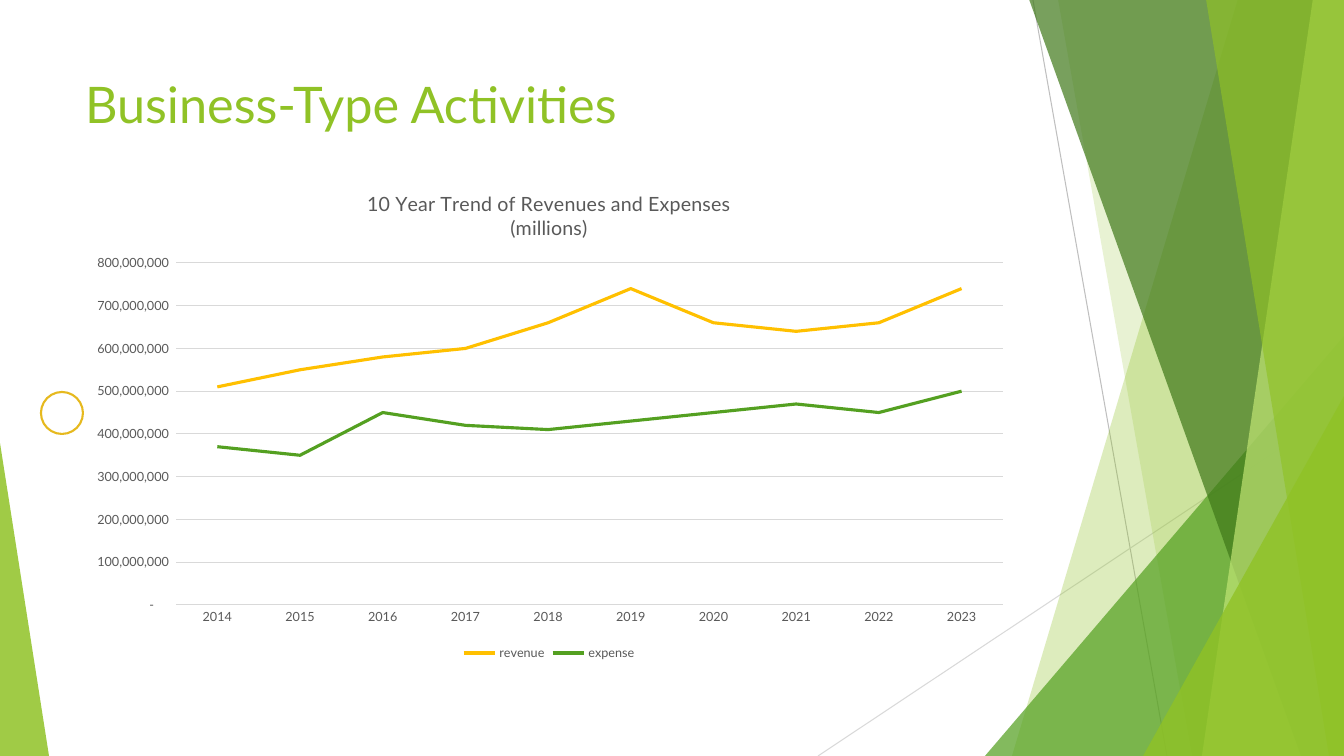
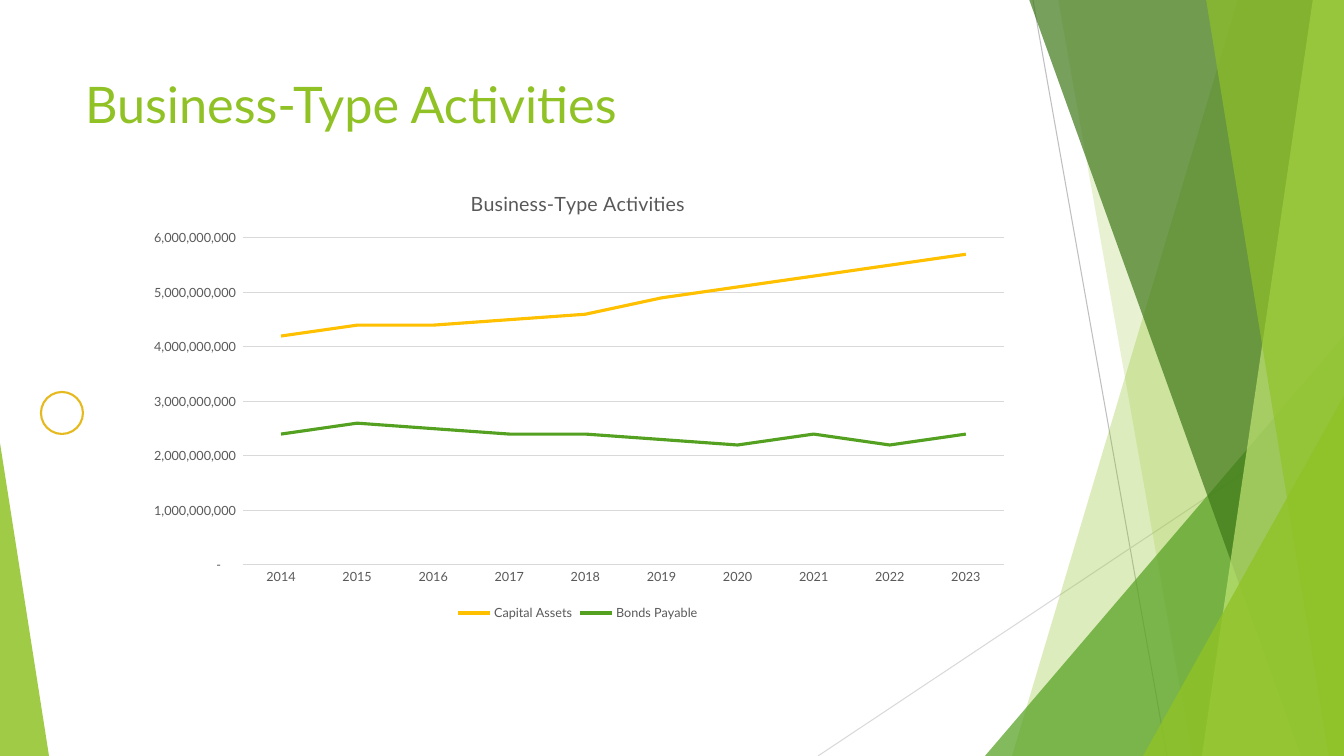
import lxml.etree
import pptx
import pptx.chart.data
import pptx.dml.color
import pptx.enum.chart
import pptx.enum.shapes
import pptx.enum.text
import pptx.oxml.ns
import pptx.util

WIDTH, HEIGHT = 1344, 756
EMU_PER_PX = 12192000 / WIDTH
YEARS = [str(year) for year in range(2014, 2024)]
MILLION = 10 ** 6


def px(length):
    return pptx.util.Emu(round(length * EMU_PER_PX))


def colour(value):
    return pptx.dml.color.RGBColor.from_string(value)


def add_child(parent, tag, **attributes):
    return lxml.etree.SubElement(parent, pptx.oxml.ns.qn(tag), attributes)


class Report:
    FONT = "Lato"
    LIME = "90C226"
    GREEN = "54A021"
    DARK_GREEN = "3F7819"
    PALE_LIME = "C0E474"
    GOLD = "E6B91E"
    AMBER = "FFC000"
    GREY = "595959"
    RULE = "D9D9D9"
    DARK_RULE = "BFBFBF"
    NUMBER_FORMAT = '_(* #,##0_);_(* \\(#,##0\\);_(* "-"??_);_('

    def __init__(self):
        self.deck = pptx.Presentation()
        self.deck.slide_width, self.deck.slide_height = px(WIDTH), px(HEIGHT)
        self.layout = self.deck.slide_layouts[5]
        self.page = None

    def add_page(self, title):
        self.page = self.deck.slides.add_slide(self.layout)
        if len(self.deck.slides) == 1:
            self.decorate_layout()
        box = self.page.shapes.title
        box.left, box.top, box.width, box.height = map(px, (75, 68, 948, 105))
        frame = box.text_frame
        frame.text = title
        frame.word_wrap = True
        frame.auto_size = pptx.enum.text.MSO_AUTO_SIZE.NONE
        frame.vertical_anchor = pptx.enum.text.MSO_ANCHOR.TOP
        para = frame.paragraphs[0]
        para.alignment = pptx.enum.text.PP_ALIGN.LEFT
        self.style_font(para.font, 36, self.LIME)

    def decorate_layout(self):
        decorations = [
            self.add_line((1033, 0), (1167, HEIGHT), self.DARK_RULE),
            self.add_line((WIDTH, 406), (818, HEIGHT), self.RULE),
            self.add_facet(1238, 1012, self.LIME, 30),
            self.add_facet(1058, 1192, self.LIME, 20),
            self.add_triangle(985, 336, 359, 1, self.GREEN, 72),
            self.add_facet(1029, 1301, self.DARK_GREEN, 70),
            self.add_facet(1313, 1202, self.PALE_LIME, 70),
            self.add_facet(1206, 1329, self.LIME, 65),
            self.add_triangle(1143, 396, 201, 1, self.LIME, 80),
            self.add_triangle(0, 443, 49, 0, self.LIME, 85),
            self.add_ring(41, 392, 42),
        ]
        for index, shape in enumerate(decorations):
            shape.element.xpath(".//p:cNvPr")[0].set("id", str(100 + index))
            self.layout.shapes.element.insert(2 + index, shape.element)

    def style_font(self, font, size, tone):
        font.name = self.FONT
        font.size = pptx.util.Pt(size)
        font.bold = False
        font.color.rgb = colour(tone)

    def style_line(self, line, tone, width=0.75):
        line.color.rgb = colour(tone)
        line.width = pptx.util.Pt(width)

    def fill_shape(self, shape, tone, opacity):
        shape.shadow.inherit = False
        shape.line.fill.background()
        shape.fill.solid()
        shape.fill.fore_color.rgb = colour(tone)
        fill = shape.element.xpath("./p:spPr/a:solidFill/a:srgbClr")[0]
        add_child(fill, "a:alpha", val=str(opacity * 1000))
        return shape

    def add_line(self, start, end, tone):
        line = self.page.shapes.add_connector(
            pptx.enum.shapes.MSO_CONNECTOR.STRAIGHT, *map(px, start + end))
        self.style_line(line.line, tone)
        add_child(line.element.spPr, "a:effectLst")
        return line

    def add_facet(self, top_x, bottom_x, tone, opacity):
        builder = self.page.shapes.build_freeform(px(top_x), px(-1), scale=1.0)
        corners = [(WIDTH, -1), (WIDTH, HEIGHT), (bottom_x, HEIGHT)]
        builder.add_line_segments([(px(x), px(y)) for x, y in corners], close=True)
        return self.fill_shape(builder.convert_to_shape(), tone, opacity)

    def add_triangle(self, left, top, width, apex, tone, opacity):
        triangle = self.page.shapes.add_shape(
            pptx.enum.shapes.MSO_SHAPE.ISOSCELES_TRIANGLE,
            *map(px, (left, top, width, HEIGHT - top)))
        triangle.adjustments[0] = apex
        return self.fill_shape(triangle, tone, opacity)

    def add_ring(self, left, top, size):
        ring = self.page.shapes.add_shape(
            pptx.enum.shapes.MSO_SHAPE.OVAL, *map(px, (left, top, size, size)))
        ring.shadow.inherit = False
        ring.fill.background()
        self.style_line(ring.line, self.GOLD, 1.5)
        return ring

    def add_trend(self, area, plot, title, maximum, step, series):
        data = pptx.chart.data.CategoryChartData(number_format=self.NUMBER_FORMAT)
        data.categories = YEARS
        for name, values in series.items():
            data.add_series(name, [value * MILLION for value in values])
        chart = self.page.shapes.add_chart(
            pptx.enum.chart.XL_CHART_TYPE.LINE, *map(px, area), data).chart
        self.style_font(chart.font, 9, self.GREY)

        chart.has_title = True
        frame = chart.chart_title.text_frame
        frame.text = title
        for para in frame.paragraphs:
            self.style_font(para.font, 14, self.GREY)
        chart.chart_title.include_in_layout = False

        chart.has_legend = True
        chart.legend.position = pptx.enum.chart.XL_LEGEND_POSITION.BOTTOM
        chart.legend.include_in_layout = False
        self.style_font(chart.legend.font, 9, self.GREY)

        for axis in (chart.category_axis, chart.value_axis):
            axis.major_tick_mark = pptx.enum.chart.XL_TICK_MARK.NONE
            axis.minor_tick_mark = pptx.enum.chart.XL_TICK_MARK.NONE
            self.style_font(axis.tick_labels.font, 9, self.GREY)
        self.style_line(chart.category_axis.format.line, self.RULE)
        scale = chart.value_axis
        scale.minimum_scale = 0
        scale.maximum_scale = maximum * MILLION
        scale.major_unit = step * MILLION
        scale.format.line.fill.background()
        scale.has_major_gridlines = True
        self.style_line(scale.major_gridlines.format.line, self.RULE)
        scale.tick_labels.number_format = self.NUMBER_FORMAT
        scale.tick_labels.number_format_is_linked = False

        chart.plots[0].vary_by_categories = False
        for line, tone in zip(chart.plots[0].series, (self.AMBER, self.GREEN)):
            line.smooth = False
            self.style_line(line.format.line, tone, 2.25)
        self.place_plot(chart, area, plot)

    def place_plot(self, chart, area, plot):
        plot_area = chart.element.xpath(".//c:plotArea")[0]
        for old in plot_area.xpath("./c:layout"):
            plot_area.remove(old)
        layout = add_child(plot_area, "c:layout")
        plot_area.insert(0, layout)
        manual = add_child(layout, "c:manualLayout")
        left, top, width, height = area
        settings = {
            "layoutTarget": "inner", "xMode": "edge", "yMode": "edge",
            "x": (plot[0] - left) / width, "y": (plot[1] - top) / height,
            "w": plot[2] / width, "h": plot[3] / height,
        }
        for tag, value in settings.items():
            add_child(manual, "c:" + tag, val=str(value))


def main():
    report = Report()
    report.add_page("Business-Type Activities")
    report.add_trend(
        (75, 171, 948, 494), (176, 263, 827, 342),
        "10 Year Trend of Revenues and Expenses\n(millions)", 800, 100,
        {"revenue": [510, 550, 580, 600, 660, 740, 660, 640, 660, 740],
         "expense": [370, 350, 450, 420, 410, 430, 450, 470, 450, 500]})
    report.add_page("Business-Type Activities")
    report.add_trend(
        (133, 171, 890, 454), (243, 238, 761, 327),
        "Business-Type Activities", 6000, 1000,
        {"Capital Assets":
            [4200, 4400, 4400, 4500, 4600, 4900, 5100, 5300, 5500, 5700],
         "Bonds Payable":
            [2400, 2600, 2500, 2400, 2400, 2300, 2200, 2400, 2200, 2400]})
    report.deck.save("out.pptx")


if __name__ == "__main__":
    main()
